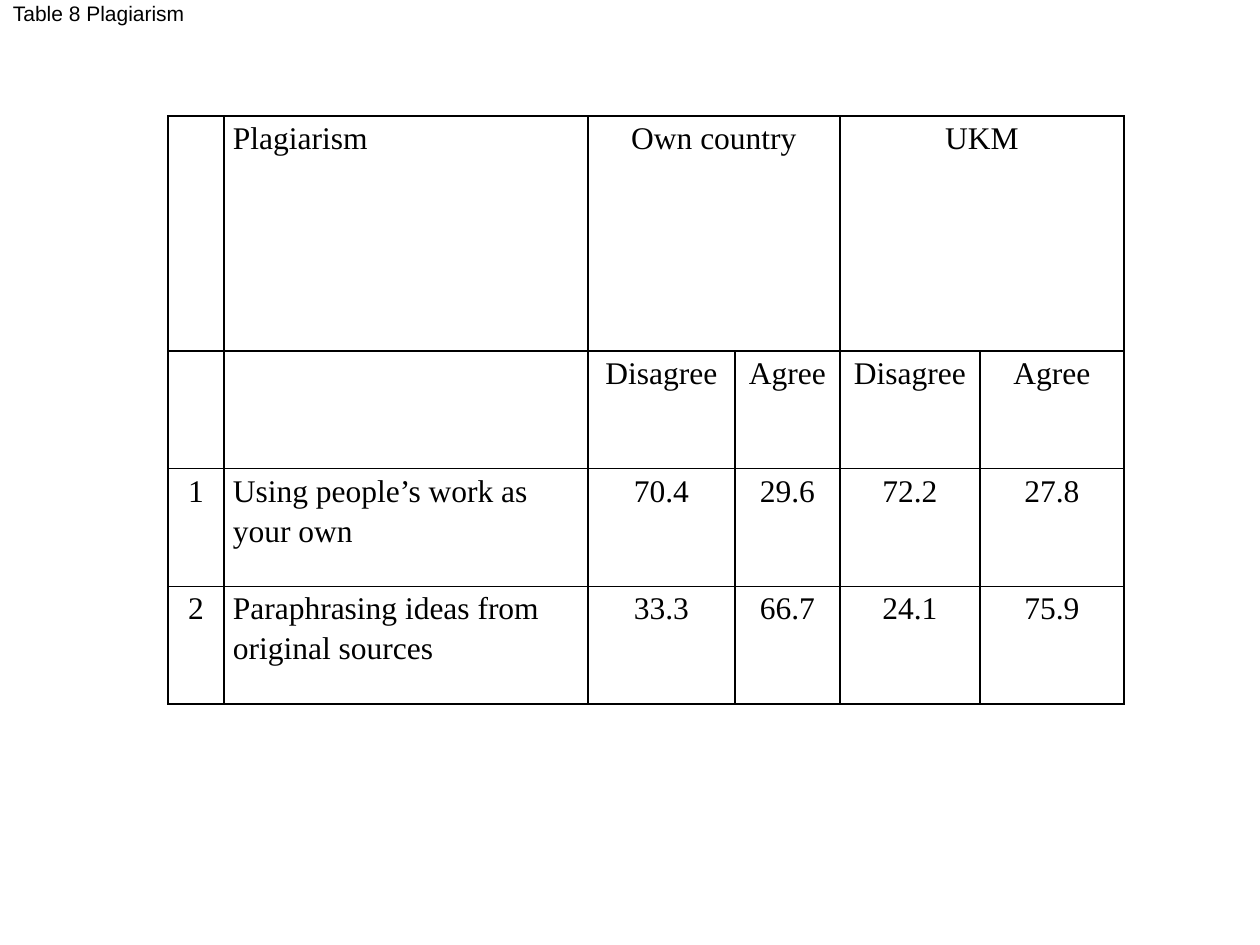
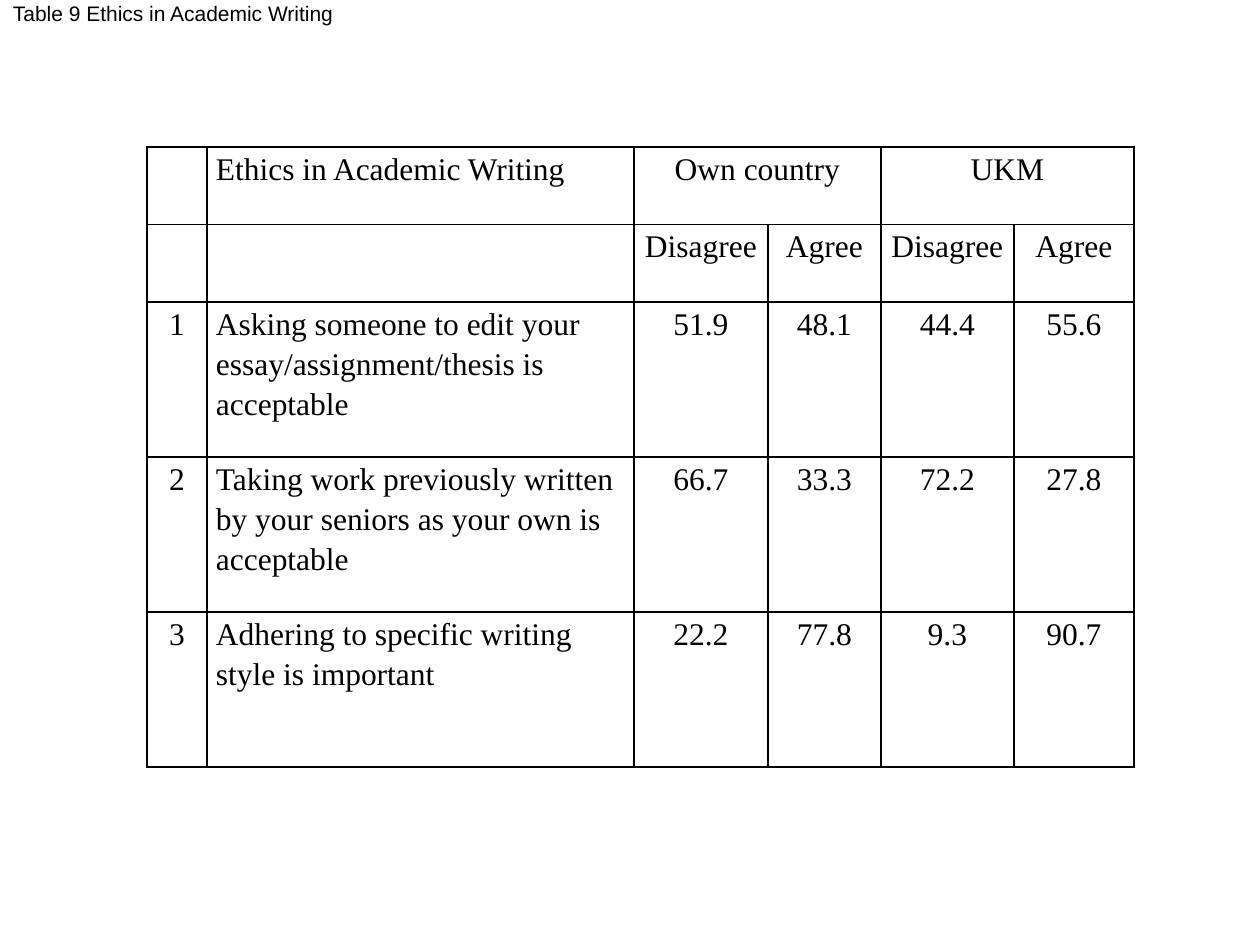
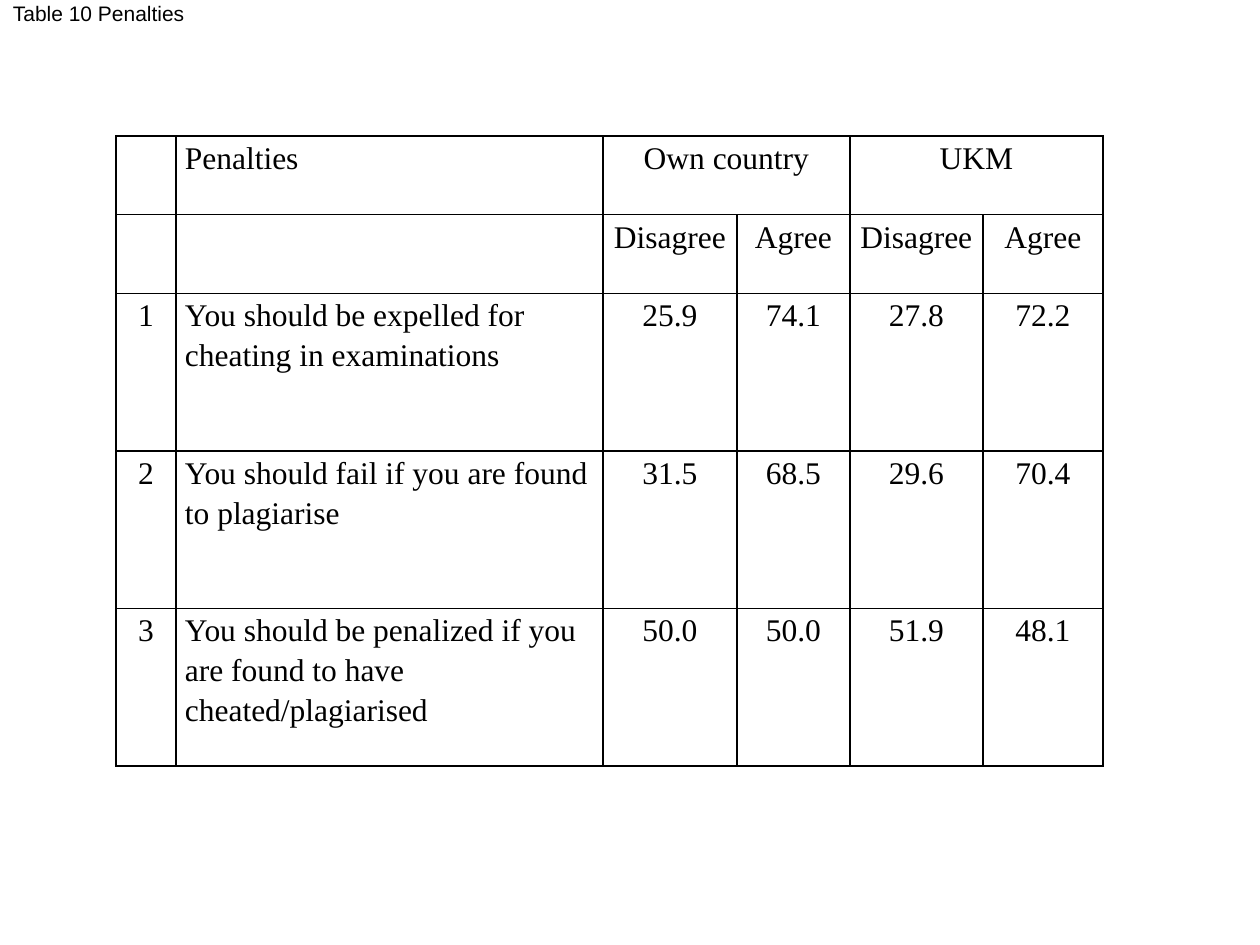
from dataclasses import dataclass

from lxml.etree import SubElement
from pptx import Presentation
from pptx.dml.color import RGBColor
from pptx.enum.text import MSO_ANCHOR, PP_ALIGN
from pptx.oxml.ns import qn
from pptx.util import Emu, Pt

# Content
COUNTRIES = ["Own country", "UKM"]
ANSWERS = ["Disagree", "Agree"]

SURVEYS = [
    {
        "caption": "Table 8 Plagiarism",
        "topic": "Plagiarism",
        "items": [
            ("Using people’s work as your own", "70.4", "29.6", "72.2", "27.8"),
            ("Paraphrasing ideas from original sources", "33.3", "66.7", "24.1", "75.9"),
        ],
        "origin": (168, 116),
        "columns": [56, 364, 147, 105, 140, 144],
        "height": 588,
        "row_weights": [2, 1, 1, 1],
    },
    {
        "caption": "Table 9 Ethics in Academic Writing",
        "topic": "Ethics in Academic Writing",
        "items": [
            ("Asking someone to edit your essay/assignment/thesis is acceptable",
             "51.9", "48.1", "44.4", "55.6"),
            ("Taking work previously written by your seniors as your own is acceptable",
             "66.7", "33.3", "72.2", "27.8"),
            ("Adhering to specific writing style is important",
             "22.2", "77.8", "9.3", "90.7"),
        ],
        "origin": (147, 147),
        "columns": [60, 427, 134, 113, 133, 120],
        "height": 620,
        "row_weights": [1, 1, 2, 2, 2],
    },
    {
        "caption": "Table 10 Penalties",
        "topic": "Penalties",
        "items": [
            ("You should be expelled for cheating in examinations",
             "25.9", "74.1", "27.8", "72.2"),
            ("You should fail if you are found to plagiarise",
             "31.5", "68.5", "29.6", "70.4"),
            ("You should be penalized if you are found to have cheated/plagiarised",
             "50.0", "50.0", "51.9", "48.1"),
        ],
        "origin": (116, 136),
        "columns": [60, 427, 134, 113, 133, 120],
        "height": 630,
        "row_weights": [1, 1, 2, 2, 2],
    },
]


# Theme and scale
@dataclass(frozen=True)
class Theme:
    ink: str = "000000"
    caption_font: str = "Arial"
    caption_size: int = 12
    table_font: str = "Times New Roman"
    table_size: int = 18
    line_spacing: float = 1.15
    border: int = 1


THEME = Theme()
SLIDE_W, SLIDE_H = 1260, 945
CAPTION_H = 63
CAPTION_INSET = (13, 1)
CELL_INSET = 9
TOPIC_COLUMN = 1


def px(n):
    return Emu(round(n * 914400 / 126))


def add_run(p, text, font, size):
    r = p.add_run()
    r.text = text
    r.font.name = font
    r.font.size = Pt(size)
    r.font.color.rgb = RGBColor.from_string(THEME.ink)


def add_caption(slide, text):
    tf = slide.shapes.add_textbox(0, 0, px(SLIDE_W), px(CAPTION_H)).text_frame
    tf.word_wrap = True
    tf.vertical_anchor = MSO_ANCHOR.TOP
    tf.margin_left, tf.margin_top = map(px, CAPTION_INSET)
    add_run(tf.paragraphs[0], text, THEME.caption_font, THEME.caption_size)


def set_borders(cell):
    tc_pr = cell._tc.get_or_add_tcPr()
    for side in ("lnL", "lnR", "lnT", "lnB"):
        ln = SubElement(tc_pr, qn(f"a:{side}"), w=str(Pt(THEME.border)))
        fill = SubElement(ln, qn("a:solidFill"))
        SubElement(fill, qn("a:srgbClr"), val=THEME.ink)


def fill_cell(cell, text, align):
    set_borders(cell)
    cell.fill.background()
    cell.margin_left = cell.margin_right = px(CELL_INSET)
    cell.margin_top = cell.margin_bottom = 0
    if text:
        p = cell.text_frame.paragraphs[0]
        p.alignment = align
        p.line_spacing = THEME.line_spacing
        add_run(p, text, THEME.table_font, THEME.table_size)


def table_rows(survey):
    """Two header rows, then the numbered statements."""
    countries = [text for name in COUNTRIES for text in (name, "")]
    header = [["", survey["topic"], *countries],
              ["", "", *ANSWERS * len(COUNTRIES)]]
    return header + [[str(n), *item] for n, item in enumerate(survey["items"], 1)]


def add_survey_table(slide, survey):
    rows, columns = table_rows(survey), survey["columns"]
    left, top = survey["origin"]
    table = slide.shapes.add_table(
        len(rows), len(columns), px(left), px(top),
        px(sum(columns)), px(survey["height"])).table
    table.first_row = table.horz_banding = False

    # Column widths and row heights
    for column, width in zip(table.columns, columns):
        column.width = px(width)
    unit = survey["height"] / sum(survey["row_weights"])
    for row, weight in zip(table.rows, survey["row_weights"]):
        row.height = px(weight * unit)

    # Each country spans its answers
    for c in range(TOPIC_COLUMN + 1, len(columns), len(ANSWERS)):
        table.cell(0, c).merge(table.cell(0, c + len(ANSWERS) - 1))

    for i, row in enumerate(rows):
        for c, text in enumerate(row):
            align = PP_ALIGN.LEFT if c == TOPIC_COLUMN else PP_ALIGN.CENTER
            fill_cell(table.cell(i, c), text, align)


def main():
    prs = Presentation()
    prs.slide_width, prs.slide_height = px(SLIDE_W), px(SLIDE_H)
    for survey in SURVEYS:
        slide = prs.slides.add_slide(prs.slide_layouts[6])
        add_survey_table(slide, survey)
        add_caption(slide, survey["caption"])
    prs.save("out.pptx")


if __name__ == "__main__":
    main()
